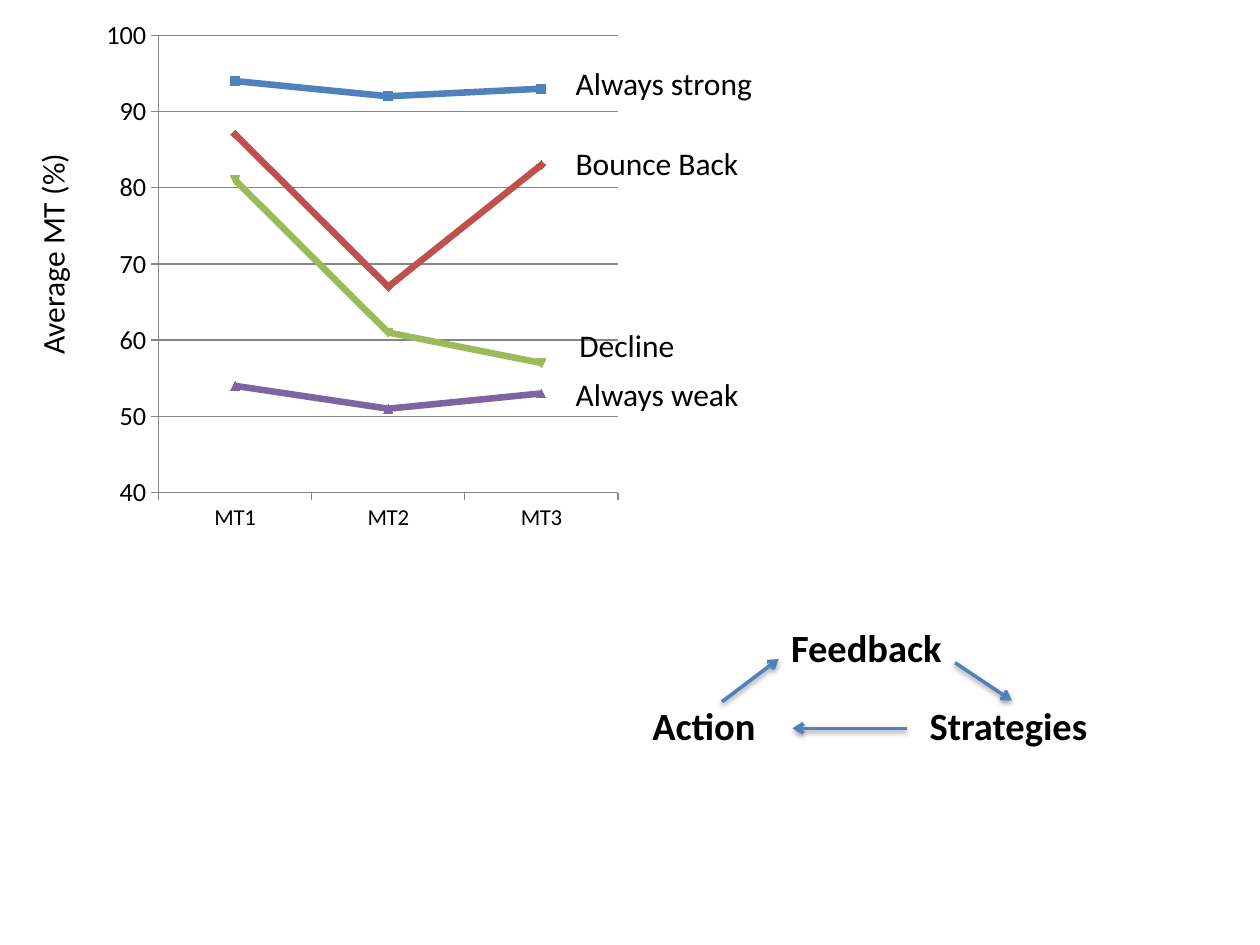
from lxml.etree import SubElement
from pptx import Presentation
from pptx.chart.data import CategoryChartData
from pptx.dml.color import RGBColor
from pptx.enum.chart import XL_CHART_TYPE, XL_TICK_MARK
from pptx.enum.shapes import MSO_CONNECTOR
from pptx.enum.text import MSO_AUTO_SIZE
from pptx.oxml import parse_xml
from pptx.oxml.ns import nsdecls, qn
from pptx.util import Emu, Pt

SHADOW = f"""<a:effectLst {nsdecls('a')}>
  <a:outerShdw blurRad="40000" dist="20000" dir="5400000" rotWithShape="0">
    <a:srgbClr val="000000"><a:alpha val="38000"/></a:srgbClr>
  </a:outerShdw>
</a:effectLst>"""


def color(value):
    return RGBColor.from_string(value)


class Slide:
    """Draws styled elements on one slide, measured at 100 px to the inch."""

    font = "Calibri"
    ink = "000000"
    accent = "4F81BD"
    grid = "868686"

    def __init__(self, page):
        self.page = page

    @staticmethod
    def px(*lengths):
        return [Emu(length * 9144) for length in lengths]

    def text(self, words, left, top, width, height, size, bold=False, rotation=0):
        box = self.page.shapes.add_textbox(*self.px(left, top, width, height))
        box.rotation = rotation
        frame = box.text_frame
        frame.text = words
        frame.word_wrap = rotation != 0
        frame.auto_size = MSO_AUTO_SIZE.SHAPE_TO_FIT_TEXT
        self.style(frame.paragraphs[0].runs[0].font, size, bold)

    def style(self, font, size, bold=False):
        font.name = self.font
        font.size = Pt(size)
        font.bold = bold
        font.color.rgb = color(self.ink)

    def arrow(self, *ends):
        arrow = self.page.shapes.add_connector(MSO_CONNECTOR.STRAIGHT, *self.px(*ends))
        arrow.line.width = Pt(2)
        arrow.line.color.rgb = color(self.accent)
        properties = arrow.element.spPr
        SubElement(properties.find(qn("a:ln")), qn("a:tailEnd"), type="arrow")
        properties.append(parse_xml(SHADOW))

    def line_chart(self, categories, series, left, top, width, height, plot):
        data = CategoryChartData()
        data.categories = categories
        for name, _, values in series:
            data.add_series(name, values)
        chart = self.page.shapes.add_chart(
            XL_CHART_TYPE.LINE_MARKERS, *self.px(left, top, width, height), data
        ).chart
        chart.has_legend = False
        chart.has_title = False
        self.style(chart.font, 10)
        for line, (_, hue, _) in zip(chart.plots[0].series, series):
            line.smooth = False
            line.format.line.width = Pt(3.75)
            line.format.line.color.rgb = color(hue)
        self.axis(chart.category_axis, 13)
        self.axis(chart.value_axis, 15)
        chart.value_axis.minimum_scale = 40
        chart.value_axis.maximum_scale = 100
        chart.value_axis.major_unit = 10
        chart.value_axis.has_major_gridlines = True
        self.rule(chart.value_axis.major_gridlines.format.line)
        self.place_plot(chart, plot)

    def axis(self, axis, size):
        axis.major_tick_mark = XL_TICK_MARK.OUTSIDE
        axis.minor_tick_mark = XL_TICK_MARK.NONE
        self.style(axis.tick_labels.font, size)
        self.rule(axis.format.line)

    def rule(self, line):
        line.width = Pt(0.75)
        line.color.rgb = color(self.grid)

    @staticmethod
    def place_plot(chart, plot):
        area = chart.element.find(".//" + qn("c:plotArea"))
        for layout in area.findall(qn("c:layout")):
            area.remove(layout)
        settings = [("layoutTarget", "inner"), ("xMode", "edge"), ("yMode", "edge")]
        settings += zip("xywh", plot)
        tags = "".join(f'<c:{tag} val="{value}"/>' for tag, value in settings)
        area.insert(0, parse_xml(
            f"<c:layout {nsdecls('c')}><c:manualLayout>{tags}</c:manualLayout></c:layout>"
        ))


def main():
    deck = Presentation()
    deck.slide_width, deck.slide_height = Slide.px(1000, 750)
    slide = Slide(deck.slides.add_slide(deck.slide_layouts[6]))

    slide.text("Average MT (%)", -50, 180, 183, 40, 18, rotation=270)
    for step, left, top, width in [
        ("Feedback", 618, 490, 141),
        ("Strategies", 728, 552, 148),
        ("Action", 508, 552, 103),
    ]:
        slide.text(step, left, top, width, 47, 22, bold=True)
    for ends in [(758, 526, 803, 556), (720, 578, 629, 578), (573, 557, 618, 523)]:
        slide.arrow(*ends)

    series = [
        ("Series 1", "4F81BD", (94, 92, 93)),
        ("Series 2", "C0504D", (87, 67, 83)),
        ("Series 3", "9BBB59", (81, 61, 57)),
        ("Series 4", "8064A2", (54, 51, 53)),
    ]
    slide.line_chart(
        ["MT1", "MT2", "MT3"], series, 75, 7, 424, 422, plot=(0.12, 0.05, 0.86, 0.86)
    )
    for label, left, top, width in [
        ("Always strong", 447, 46, 163),
        ("Always weak", 447, 293, 152),
        ("Bounce Back", 447, 109, 151),
        ("Decline", 450, 254, 96),
    ]:
        slide.text(label, left, top, width, 40, 18)

    deck.save("out.pptx")


if __name__ == "__main__":
    main()
